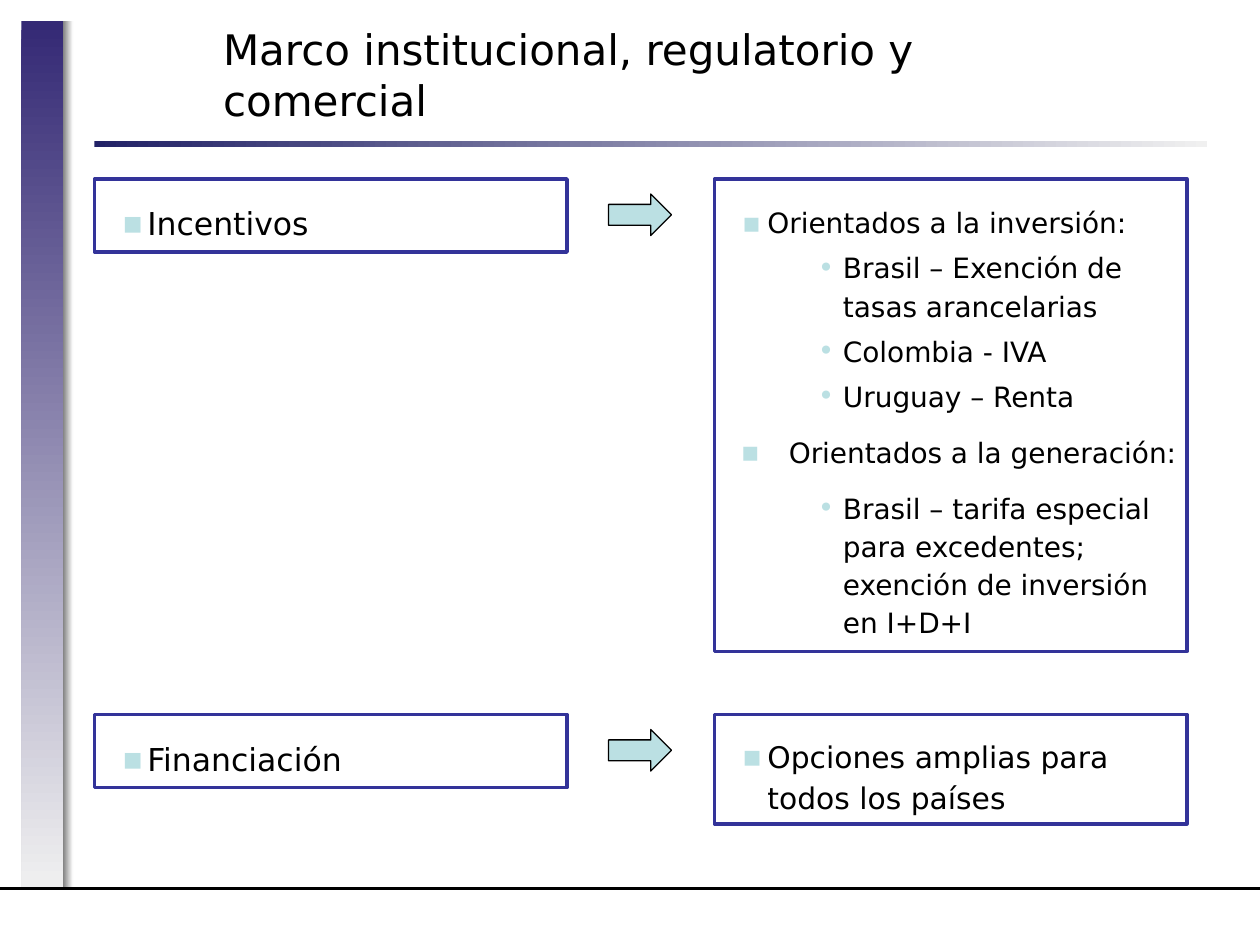
"""Build the slide on incentives and financing for the institutional framework."""
from lxml.etree import SubElement
from pptx import Presentation
from pptx.dml.color import RGBColor as RGB
from pptx.enum.shapes import MSO_CONNECTOR as LINE, MSO_SHAPE as SHAPE
from pptx.enum.text import MSO_ANCHOR as ANCHOR, MSO_AUTO_SIZE as AUTO, PP_ALIGN as ALIGN
from pptx.oxml.ns import qn
from pptx.util import Inches, Pt

FONT = "DejaVu Sans"
HUES = {
    "black": "000000", "white": "FFFFFF", "frame": "333399", "aqua": "BBE0E3",
    "violet": "342975", "navy": "222267", "pale": "F0F0F0", "gray": "808080",
}


def add_box(kind, spot, fill, edge=None, width=0):
    box = slide.shapes.add_shape(kind, *map(Inches, spot))
    box.shadow.inherit = False
    if isinstance(fill, tuple):
        box.fill.gradient()
        box.fill.gradient_angle = fill[2]
        for stop, hue in zip(box.fill.gradient_stops, fill):
            stop.color.rgb = RGB.from_string(HUES[hue])
        for stop, place in zip(box.fill.gradient_stops, (0, 1)):
            stop.position = place
    else:
        box.fill.solid()
        box.fill.fore_color.rgb = RGB.from_string(HUES[fill])
    if edge:
        box.line.color.rgb = RGB.from_string(HUES[edge])
        box.line.width = Pt(width)
    else:
        box.line.fill.background()
    return box


def add_run(para, text, size):
    run = para.add_run()
    run.text = text
    run.font.name = FONT
    run.font.size = Pt(size)
    run.font.color.rgb = RGB.from_string(HUES["black"])


deck = Presentation()
deck.slide_width, deck.slide_height = Inches(10), Inches(7.5)
slide = deck.slides.add_slide(deck.slide_layouts[5])

bars = [
    ((0.17, 0.17, 0.33, 6.88), ("violet", "pale", 270)),
    ((0.5, 0.17, 0.08, 6.88), ("gray", "white", 0)),
    ((0.75, 1.12, 8.83, 0.05), ("navy", "pale", 0)),
]
for spot, fill in bars:
    add_box(SHAPE.RECTANGLE, spot, fill)

rule = slide.shapes.add_connector(LINE.STRAIGHT, 0, Inches(7.05), Inches(10), Inches(7.05))
rule.line.color.rgb = RGB.from_string(HUES["black"])
rule.line.width = Pt(1.75)
SubElement(rule._element.spPr, qn("a:effectLst"))

title = slide.shapes.title
title.left, title.top = Inches(1.67), Inches(0.23)
title.width, title.height = Inches(7.33), Inches(0.72)
frame = title.text_frame
frame.word_wrap = True
frame.auto_size = AUTO.NONE
frame.vertical_anchor = ANCHOR.MIDDLE
frame.paragraphs[0].alignment = ALIGN.LEFT
add_run(frame.paragraphs[0], "Marco institucional, regulatorio y comercial", 24)

head = (1, 0.42, -0.2, 6, "▪")
wide = (1, 0.59, -0.38, 6, "▪")
item = (4, 1.02, -0.2, 0, "•")
last = (4, 1.02, -0.2, 6, "•")
left, right, top, base = 0.75, 5.67, 1.42, 5.67
lists = [
    (left, top, 0.58, 18, [(head, "Incentivos")]),
    (right, top, 3.75, 16, [
        (head, "Orientados a la inversión:"),
        (item, "Brasil – Exención de tasas arancelarias"),
        (item, "Colombia - IVA"),
        (item, "Uruguay – Renta"),
        (wide, "Orientados a la generación:"),
        (last, "Brasil – tarifa especial para excedentes; exención de inversión en I+D+I"),
    ]),
    (left, base, 0.58, 18, [(head, "Financiación")]),
    (right, base, 0.87, 17, [(head, "Opciones amplias para todos los países")]),
]
for x, y, high, size, lines in lists:
    box = add_box(SHAPE.RECTANGLE, (x, y, 3.75, high), "white", "frame", 2)
    frame = box.text_frame
    frame.word_wrap = True
    frame.vertical_anchor = ANCHOR.MIDDLE
    frame.margin_left = frame.margin_right = 0
    frame.margin_top, frame.margin_bottom = Inches(0.13), Inches(0.05)
    for row, (style, text) in enumerate(lines):
        level, margin, indent, before, mark = style
        para = frame.add_paragraph() if row else frame.paragraphs[0]
        para.level = level
        para.alignment = ALIGN.LEFT
        para.line_spacing = 1.14
        para.space_before = Pt(before if row else 0)
        para.space_after = Pt(4)
        props = para._p.get_or_add_pPr()
        props.set("marL", str(Inches(margin)))
        props.set("indent", str(Inches(indent)))
        tint = SubElement(props, qn("a:buClr"))
        SubElement(tint, qn("a:srgbClr")).set("val", HUES["aqua"])
        SubElement(props, qn("a:buFont")).set("typeface", FONT)
        SubElement(props, qn("a:buChar")).set("char", mark)
        add_run(para, text, size)

for y in (top, base):
    add_box(SHAPE.RIGHT_ARROW, (4.83, y + 0.12, 0.5, 0.33), "aqua", "black", 0.75)

deck.save("out.pptx")
